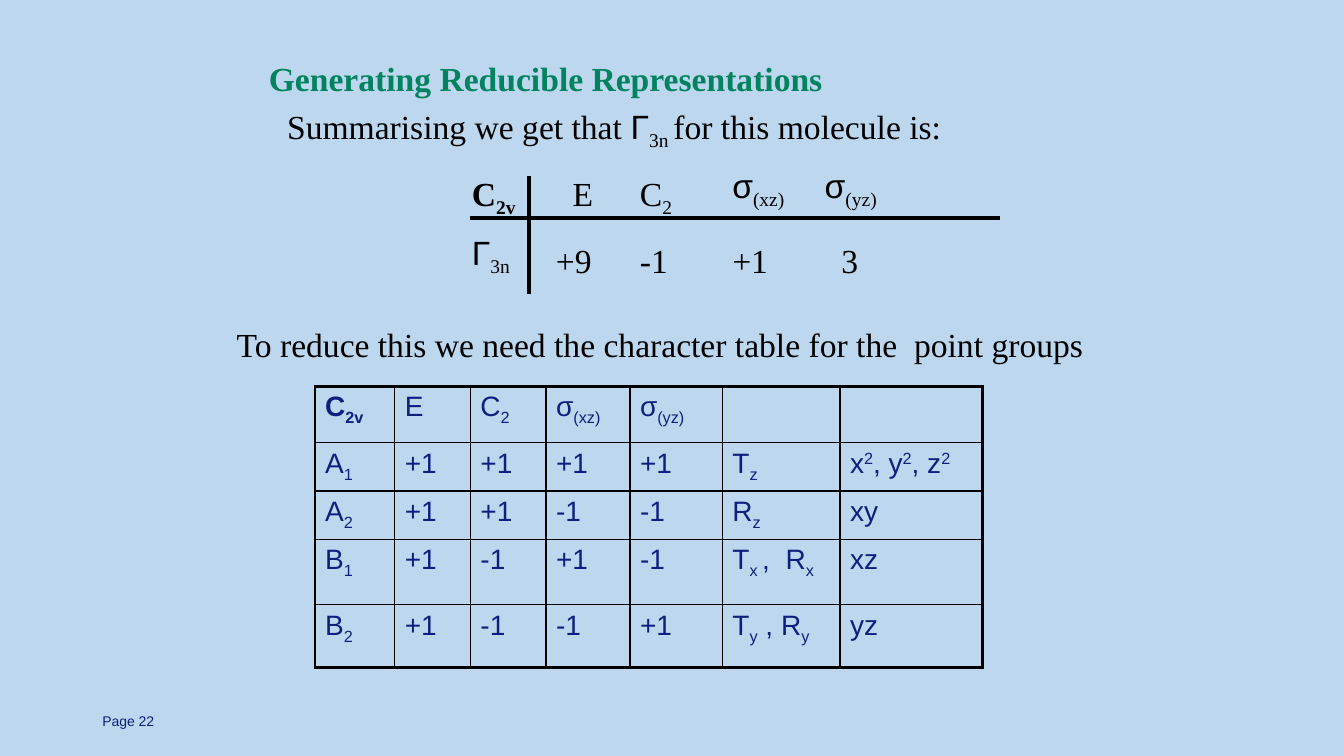
from pptx import Presentation
from pptx.dml.color import RGBColor as RGB
from pptx.enum.shapes import MSO_CONNECTOR as CONN
from pptx.enum.text import MSO_ANCHOR as ANCHOR, MSO_AUTO_SIZE as AUTO
from pptx.oxml.ns import qn
from pptx.util import Pt
from lxml.etree import SubElement

COLORS = {"sky": "BDD7EE", "green": "01835F", "navy": "0E207F", "black": "000000"}
SERIF, SANS = "Times New Roman", "Arial"
BASELINES = {"_": "-25000", "^": "30000"}


def write(tf, text, size=24, font=SERIF, color="black", bold=False):
    p = tf.paragraphs[0]
    for part in text.split("|"):
        baseline = BASELINES.get(part[:1])
        r = p.add_run()
        r.text = part[1:] if baseline else part
        r.font.size = Pt(size)
        r.font.name = SANS if part in ("Γ", "σ") else font
        r.font.bold = bold
        r.font.color.rgb = RGB.from_string(COLORS[color])
        if baseline:
            r.font._element.set("baseline", baseline)


class Deck:
    def __init__(self, width, height, background):
        self.prs = Presentation()
        self.prs.slide_width, self.prs.slide_height = Pt(width), Pt(height)
        self.slide = self.prs.slides.add_slide(self.prs.slide_layouts[6])
        fill = self.slide.background.fill
        fill.solid()
        fill.fore_color.rgb = RGB.from_string(COLORS[background])

    def text(self, x, y, w, text, h=36, wrap=False, grow=True, **fmt):
        tf = self.slide.shapes.add_textbox(Pt(x), Pt(y), Pt(w), Pt(h)).text_frame
        tf.word_wrap = wrap
        tf.auto_size = AUTO.SHAPE_TO_FIT_TEXT if grow else AUTO.NONE
        tf.vertical_anchor = ANCHOR.TOP if grow else ANCHOR.MIDDLE
        write(tf, text, **fmt)

    def line(self, x1, y1, x2, y2, weight=3):
        sp = self.slide.shapes.add_connector(CONN.STRAIGHT, Pt(x1), Pt(y1), Pt(x2), Pt(y2))
        sp.line.color.rgb = RGB.from_string(COLORS["black"])
        sp.line.width = Pt(weight)
        SubElement(sp._element.spPr, qn("a:effectLst"))

    def border(self, cell, side, weight):
        ln = SubElement(cell._tc.get_or_add_tcPr(), qn(f"a:ln{side}"), w=str(Pt(weight)))
        fill = SubElement(ln, qn("a:solidFill"))
        SubElement(fill, qn("a:srgbClr"), val=COLORS["black"])

    def table(self, x, y, widths, heights, rows, outer=2.25, inner=1):
        n_rows, n_cols = len(heights), len(widths)
        table = self.slide.shapes.add_table(
            n_rows, n_cols, Pt(x), Pt(y), Pt(sum(widths)), Pt(sum(heights))).table
        table.first_row = table.horz_banding = False
        for col, w in zip(table.columns, widths):
            col.width = Pt(w)
        for row, h in zip(table.rows, heights):
            row.height = Pt(h)
        for i, row in enumerate(rows):
            for j, text in enumerate(row):
                cell = table.cell(i, j)
                edges = {"L": j == 0, "R": j == n_cols - 1, "T": i == 0, "B": i == n_rows - 1}
                for side, is_outer in edges.items():
                    self.border(cell, side, outer if is_outer else inner)
                cell.fill.background()
                if text:
                    write(cell.text_frame, text, size=20, font=SANS, color="navy",
                          bold=i == j == 0)


def main():
    deck = Deck(960, 540, "sky")
    deck.text(66, 500.4, 216, "Page 22", h=28.8, wrap=True, grow=False,
              size=10, font=SANS, color="navy")
    deck.text(185, 37.5, 410.4, "Generating Reducible Representations",
              color="green", bold=True)
    deck.text(198, 72, 486, "Summarising we get that |Γ|_3n |for this molecule is:", wrap=True)

    deck.line(336, 156, 714, 156)
    deck.line(378, 126, 378, 210)
    deck.text(330, 120, 47.5, "C|_2v", bold=True)
    for x, y, w, text in [
        (402, 120, 28.8, "E"),
        (450, 120, 38.2, "C|_2"),
        (516, 114, 54.7, "σ|_(xz)"),
        (582, 114, 54.7, "σ|_(yz)"),
        (330, 162, 44.6, "Γ|_3n"),
        (390, 168, 40.3, "+9"),
        (450, 168, 34.6, "-1"),
        (516, 168, 40.3, "+1"),
        (594, 168, 26.6, "3"),
    ]:
        deck.text(x, y, w, text)

    deck.text(162, 228, 620,
              "To reduce this we need the character table for the  point groups")
    deck.table(225, 276, [57, 54, 54, 60, 66, 84, 102], [40.2, 32.4, 32.4, 46.8, 44.6], [
        ["C|_2v", "E", "C|_2", "σ|_(xz)", "σ|_(yz)", "", ""],
        ["A|_1", "+1", "+1", "+1", "+1", "T|_z", "x|^2|, y|^2|, z|^2"],
        ["A|_2", "+1", "+1", "-1", "-1", "R|_z", "xy"],
        ["B|_1", "+1", "-1", "+1", "-1", "T|_x |,  R|_x", "xz"],
        ["B|_2", "+1", "-1", "-1", "+1", "T|_y| , R|_y", "yz"],
    ])
    deck.prs.save("out.pptx")


if __name__ == "__main__":
    main()
